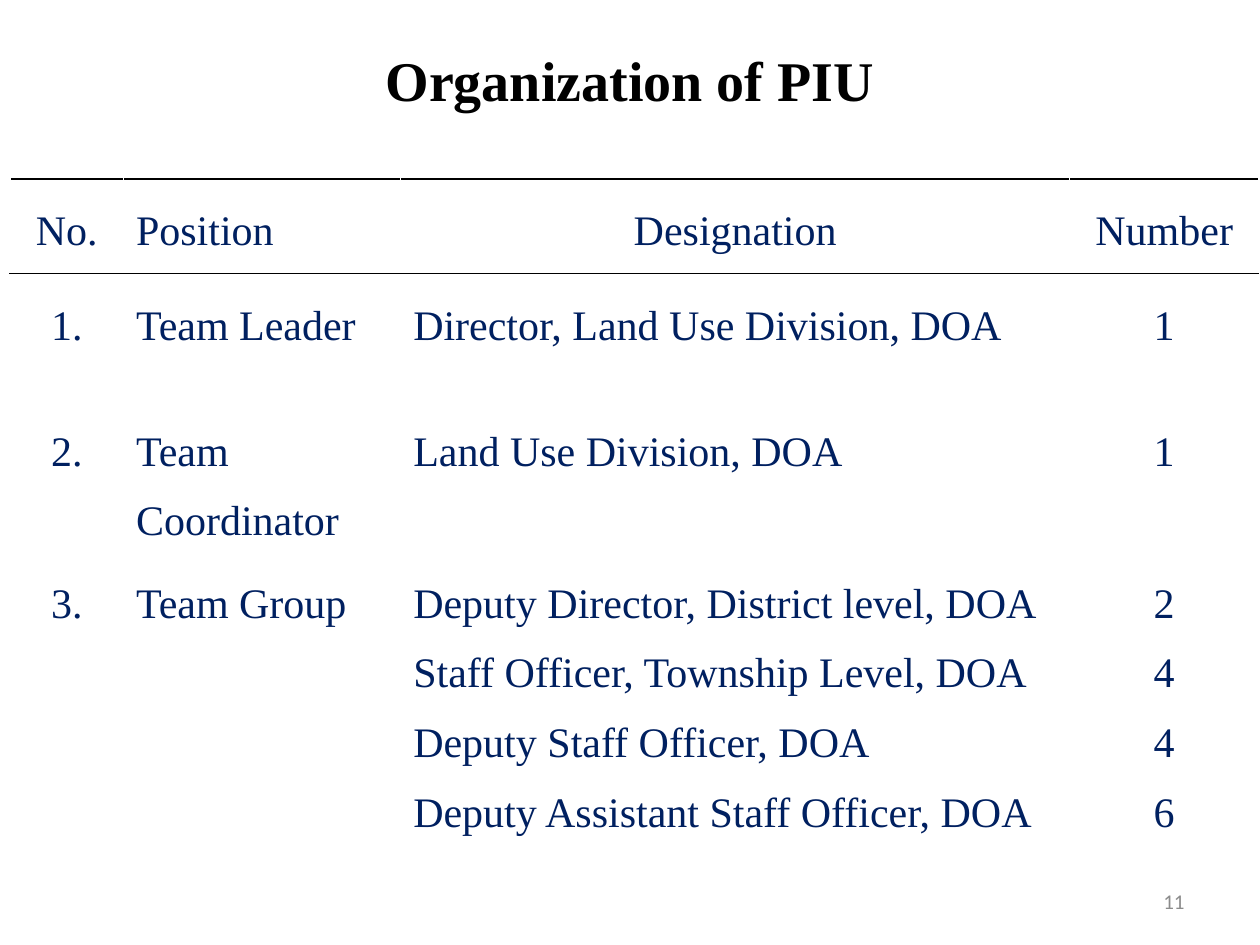
from lxml.etree import SubElement
from pptx import Presentation
from pptx.dml.color import RGBColor
from pptx.enum.text import MSO_ANCHOR, PP_ALIGN
from pptx.oxml.ns import qn
from pptx.util import Inches, Pt


def write_text(text_frame, text, font="Times New Roman", size=24, color="002060",
               bold=False, align=PP_ALIGN.LEFT, anchor=MSO_ANCHOR.TOP, spacing=None):
    text_frame.text = text
    text_frame.word_wrap = True
    text_frame.vertical_anchor = anchor
    for paragraph in text_frame.paragraphs:
        paragraph.alignment = align
        paragraph.line_spacing = spacing
        paragraph.font.name = font
        paragraph.font.size = Pt(size)
        paragraph.font.bold = bold
        paragraph.font.color.rgb = RGBColor.from_string(color)


def set_borders(cell, **colors):
    properties = cell._tc.get_or_add_tcPr()
    for side, color in colors.items():
        line = SubElement(properties, qn(f"a:ln{side}"), w=str(Pt(1)))
        fill = SubElement(line, qn("a:solidFill"))
        SubElement(fill, qn("a:srgbClr"), val=color)


presentation = Presentation()
presentation.slide_width = Inches(10)
presentation.slide_height = Inches(7.5)
slide = presentation.slides.add_slide(presentation.slide_layouts[5])

title = slide.shapes.title
title.left, title.top = Inches(0.5), Inches(0)
title.width, title.height = Inches(9), Inches(1.25)
write_text(title.text_frame, "Organization of PIU", size=32, color="000000", bold=True,
           align=PP_ALIGN.CENTER, anchor=MSO_ANCHOR.MIDDLE)

column_widths = [0.9, 2.2, 5.31, 1.5]
row_heights = [0.75, 1, 1.2, 2.31]
rows = [
    ["No.", "Position", "Designation", "Number"],
    ["1.", "Team Leader", "Director, Land Use Division, DOA", "1"],
    ["2.", "Team Coordinator", "Land Use Division, DOA", "1"],
    ["3.", "Team Group",
     "Deputy Director, District level, DOA\nStaff Officer, Township Level, DOA\n"
     "Deputy Staff Officer, DOA\nDeputy Assistant Staff Officer, DOA",
     "2\n4\n4\n6"],
]
table = slide.shapes.add_table(
    len(rows), len(column_widths), Inches(0.08), Inches(1.42),
    Inches(sum(column_widths)), Inches(sum(row_heights))).table
table.first_row = False
table.horz_banding = False
for column, width in zip(table.columns, column_widths):
    column.width = Inches(width)
for row, height in zip(table.rows, row_heights):
    row.height = Inches(height)

for row_index, row in enumerate(rows):
    for column_index, text in enumerate(row):
        cell = table.cell(row_index, column_index)
        centered = column_index in (0, 3) or (row_index == 0 and column_index == 2)
        write_text(cell.text_frame, text, spacing=1.5,
                   align=PP_ALIGN.CENTER if centered else PP_ALIGN.LEFT)
        set_borders(cell, L="FFFFFF", R="FFFFFF",
                    T="000000" if row_index < 2 else "FFFFFF",
                    B="000000" if row_index == 0 else "FFFFFF")
        cell.fill.background()

number_box = slide.shapes.add_textbox(Inches(7.17), Inches(6.95), Inches(2.33), Inches(0.4))
write_text(number_box.text_frame, "11", font="Calibri", size=12, color="8C8C8C",
           align=PP_ALIGN.RIGHT, anchor=MSO_ANCHOR.MIDDLE)

presentation.save("out.pptx")
